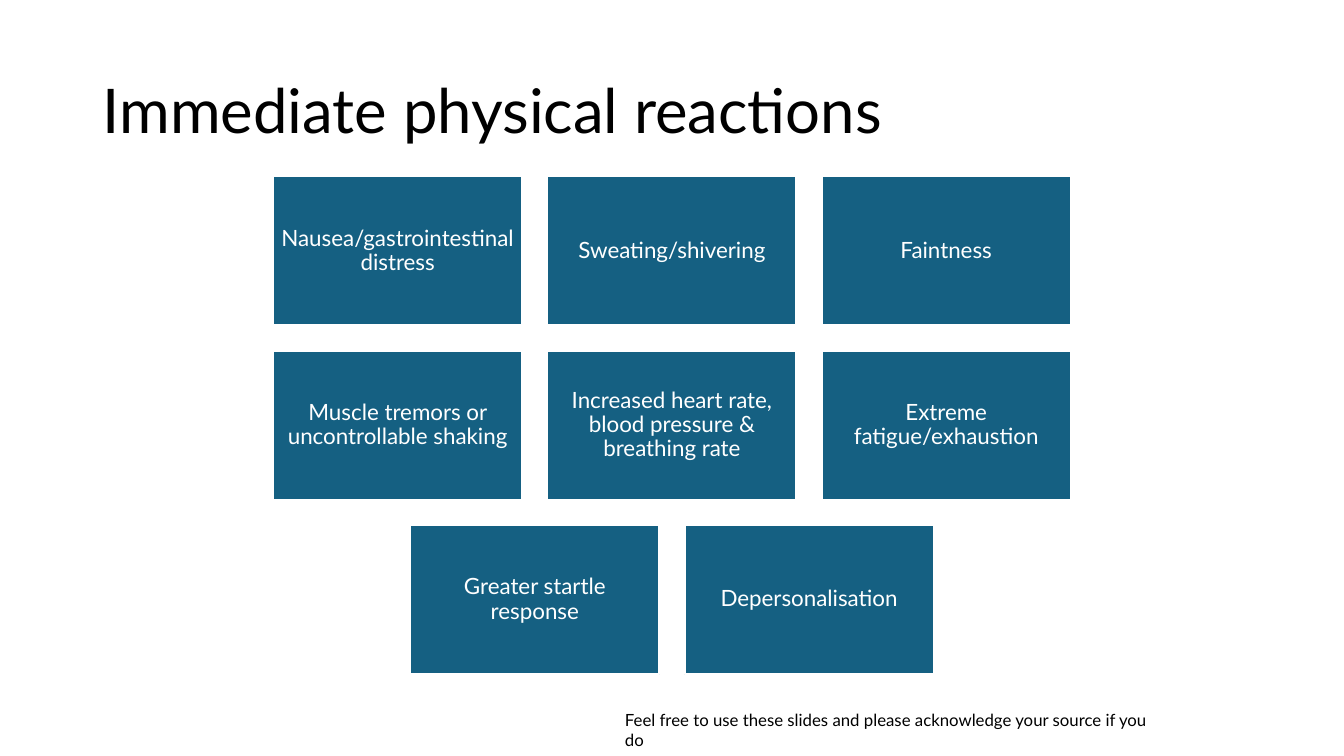
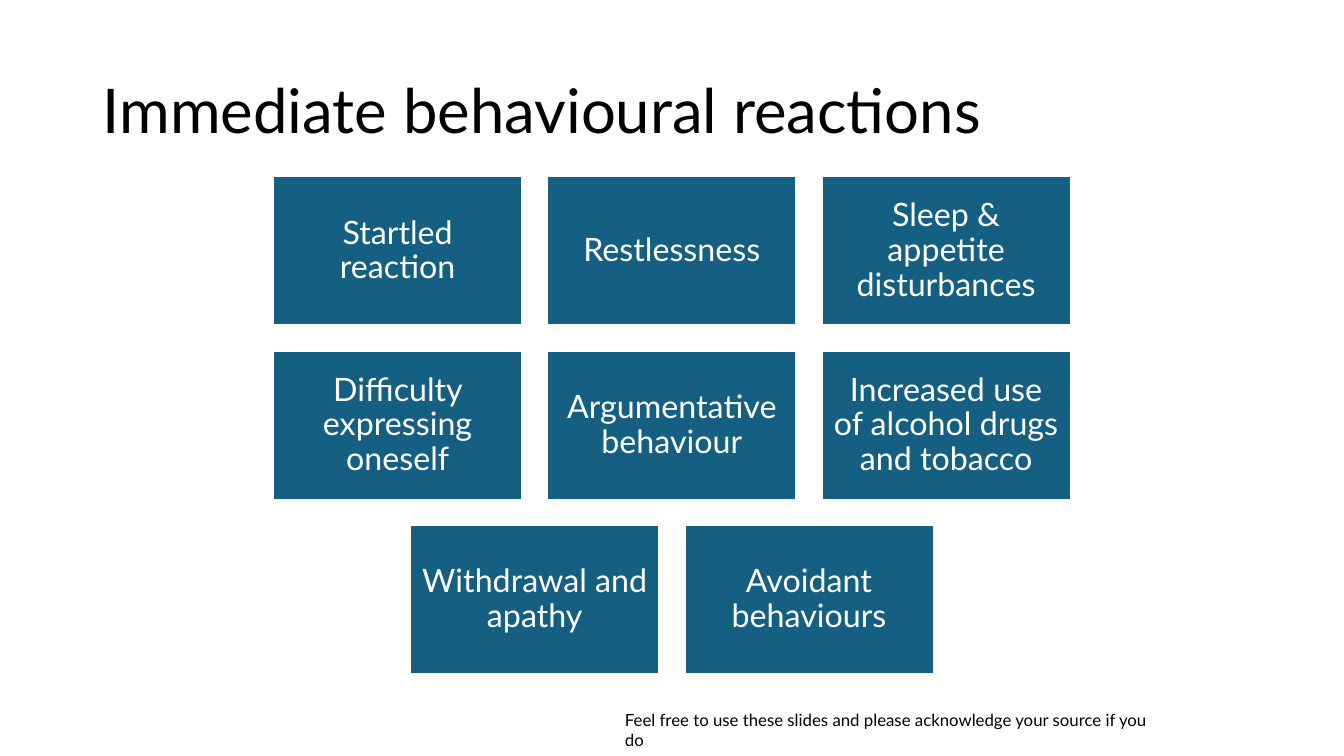
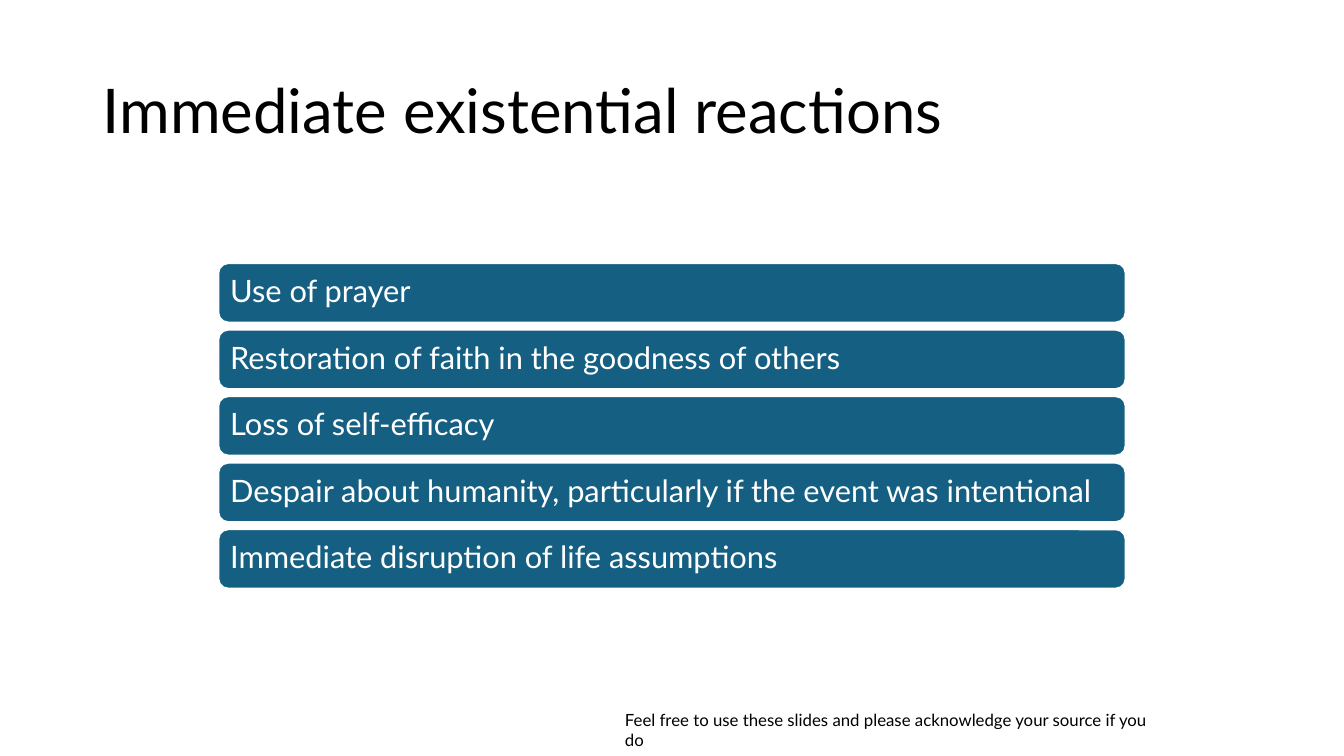
from pptx import Presentation
from pptx.dml.color import RGBColor
from pptx.enum.shapes import MSO_SHAPE
from pptx.enum.text import MSO_ANCHOR, PP_ALIGN
from pptx.util import Inches, Pt

HUES = {"ink": "000000", "paper": "FFFFFF", "tile": "156082"}
FONT = "Lato"
WIDE, HIGH = 13.33, 7.5
CREDIT = "Feel free to use these slides and please acknowledge your source if you do"

BODY = [
    "Nausea/gastrointestinal distress", "Sweating/shivering", "Faintness",
    "Muscle tremors or uncontrollable shaking",
    "Increased heart rate, blood pressure & breathing rate",
    "Extreme fatigue/exhaustion",
    "Greater startle response", "Depersonalisation",
]
HABITS = [
    "Startled reaction", "Restlessness", "Sleep & appetite disturbances",
    "Difficulty expressing oneself", "Argumentative behaviour",
    "Increased use of alcohol drugs and tobacco",
    "Withdrawal and apathy", "Avoidant behaviours",
]
BELIEFS = [
    "Use of prayer",
    "Restoration of faith in the goodness of others",
    "Loss of self-efficacy",
    "Despair about humanity, particularly if the event was intentional",
    "Immediate disruption of life assumptions",
]


def hue(name):
    return RGBColor.from_string(HUES[name])


def write(shape, text, size, color, anchor, align=PP_ALIGN.LEFT, space=0.9):
    frame = shape.text_frame
    frame.word_wrap = True
    frame.vertical_anchor = anchor
    frame.text = text
    line = frame.paragraphs[0]
    line.alignment = align
    line.line_spacing = space
    font = line.runs[0].font
    font.name = FONT
    font.size = Pt(size)
    font.color.rgb = hue(color)


def label(slide, box, text, size, anchor, space):
    shape = slide.shapes.add_textbox(*map(Inches, box))
    write(shape, text, size, "ink", anchor, space=space)


def panel(slide, kind, box, text, size, inset, align):
    shape = slide.shapes.add_shape(kind, *map(Inches, box))
    shape.shadow.inherit = False
    shape.fill.solid()
    shape.fill.fore_color.rgb = hue("tile")
    shape.line.color.rgb = hue("paper")
    shape.line.width = Pt(1.5)
    frame = shape.text_frame
    frame.margin_left = frame.margin_right = Inches(inset)
    frame.margin_top = frame.margin_bottom = Inches(inset)
    write(shape, text, size, "paper", MSO_ANCHOR.MIDDLE, align)


def page(deck, title):
    slide = deck.slides.add_slide(deck.slide_layouts[6])
    label(slide, (0.92, 0.4, 11.5, 1.45), title, 44, MSO_ANCHOR.MIDDLE, 0.9)
    label(slide, (6.1, 6.99, 5.43, 0.5), CREDIT, 12, MSO_ANCHOR.TOP, 1.0)
    return slide


def grid(slide, items, size, inset):
    cols, top, width, height, gap = 3, 1.75, 2.47, 1.48, 0.25
    for start in range(0, len(items), cols):
        row = items[start:start + cols]
        left = (WIDE - len(row) * (width + gap) + gap) / 2
        y = top + start // cols * (height + gap)
        for col, text in enumerate(row):
            box = (left + col * (width + gap), y, width, height)
            panel(slide, MSO_SHAPE.RECTANGLE, box, text, size, inset,
                  PP_ALIGN.CENTER)


def stack(slide, items):
    top, width, height, gap = 2.61, 9, 0.59, 0.07
    for row, text in enumerate(items):
        box = ((WIDE - width) / 2, top + row * (height + gap), width, height)
        panel(slide, MSO_SHAPE.ROUNDED_RECTANGLE, box, text, 22, 0.09,
              PP_ALIGN.LEFT)


def main():
    deck = Presentation()
    deck.slide_width = Inches(WIDE)
    deck.slide_height = Inches(HIGH)
    grid(page(deck, "Immediate physical reactions"), BODY, 16, 0.07)
    grid(page(deck, "Immediate behavioural reactions"), HABITS, 23, 0.1)
    stack(page(deck, "Immediate existential reactions"), BELIEFS)
    deck.save("out.pptx")


if __name__ == "__main__":
    main()
